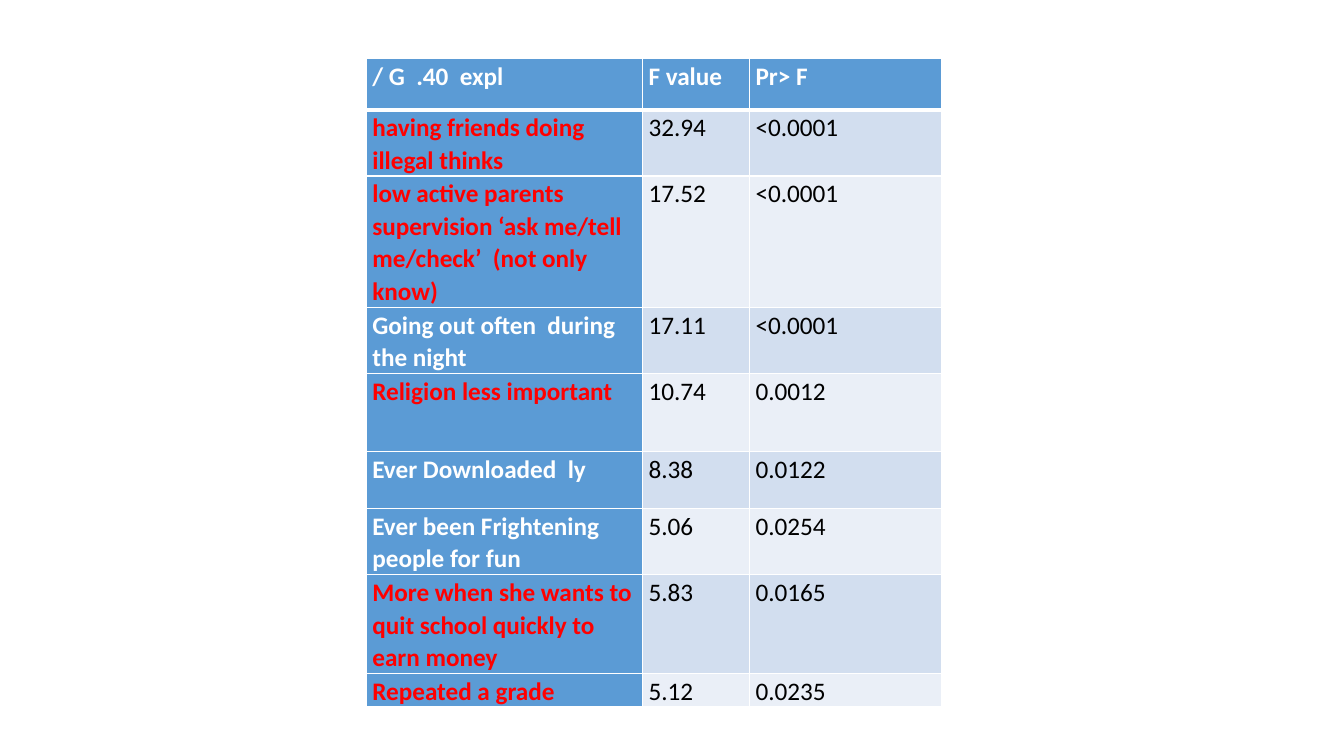
from dataclasses import dataclass

from lxml.etree import SubElement
from pptx import Presentation
from pptx.dml.color import RGBColor as RGB
from pptx.oxml.ns import qn
from pptx.util import Pt


@dataclass(frozen=True)
class Theme:
    font: str = "Calibri"
    size: float = 18
    spacing: float = 1.06
    blue: str = "5B9BD5"
    bands: tuple = ("D2DEEF", "EAEFF7")
    white: str = "FFFFFF"
    black: str = "000000"
    red: str = "FF0000"
    thin: float = 1
    thick: float = 3


THEME = Theme()

HEADER = ("/ G  .40  expl", "F value", "Pr> F")
# Factor, F value, probability, highlighted in red, row height
FACTORS = [
    ("having friends doing illegal thinks", "32.94", "<0.0001", True, 38),
    ("low active parents supervision ‘ask me/tell me/check’  (not only know)",
     "17.52", "<0.0001", True, 38),
    ("Going out often  during the night", "17.11", "<0.0001", False, 38),
    ("Religion less important", "10.74", "0.0012", True, 56),
    ("Ever Downloaded  ly", "8.38", "0.0122", False, 40.5),
    ("Ever been Frightening people for fun", "5.06", "0.0254", False, 38),
    ("More when she wants to quit school quickly to earn money",
     "5.83", "0.0165", True, 38),
    ("Repeated a grade", "5.12", "0.0235", True, 19.5),
]
HEADER_HEIGHT = 36.5
COLUMN_SHARES = (0.48, 0.186, 0.334)


def set_borders(cell, top, bottom):
    """Draw white cell edges; widths are in points."""
    tc_pr = cell._tc.get_or_add_tcPr()
    widths = {"lnL": THEME.thin, "lnR": THEME.thin, "lnT": top, "lnB": bottom}
    for edge, width in widths.items():
        ln = SubElement(tc_pr, qn(f"a:{edge}"), w=str(Pt(width)))
        fill = SubElement(ln, qn("a:solidFill"))
        SubElement(fill, qn("a:srgbClr"), val=THEME.white)


def fill_cell(cell, text, fill, color, bold, top, bottom):
    set_borders(cell, top, bottom)
    cell.fill.solid()
    cell.fill.fore_color.rgb = RGB.from_string(fill)
    margins = {"margin_left": Pt(4.5), "margin_right": Pt(4.5),
               "margin_top": Pt(0.7), "margin_bottom": Pt(0)}
    for name, value in margins.items():
        setattr(cell, name, value)
    p = cell.text_frame.paragraphs[0]
    p.line_spacing = THEME.spacing
    r = p.add_run()
    r.text = text
    formats = {"name": THEME.font, "size": Pt(THEME.size), "bold": bold}
    for name, value in formats.items():
        setattr(r.font, name, value)
    r.font.color.rgb = RGB.from_string(color)


def add_factor_table(s, left, top, width, height):
    table = s.shapes.add_table(len(FACTORS) + 1, len(HEADER), Pt(left), Pt(top),
                               Pt(width), Pt(height)).table
    for column, share in zip(table.columns, COLUMN_SHARES):
        column.width = Pt(width * share)

    # Header row
    table.rows[0].height = Pt(HEADER_HEIGHT)
    for col, text in enumerate(HEADER):
        fill_cell(table.cell(0, col), text, THEME.blue, THEME.white, True,
                  THEME.thin, THEME.thick)

    # Factor rows: blue label column, banded values
    for row, (label, f_value, probability, red, row_height) in enumerate(FACTORS, 1):
        table.rows[row].height = Pt(row_height)
        upper = THEME.thick if row == 1 else THEME.thin
        fill_cell(table.cell(row, 0), label, THEME.blue,
                  THEME.red if red else THEME.white, True, upper, THEME.thin)
        band = THEME.bands[(row - 1) % 2]
        for col, text in enumerate((f_value, probability), 1):
            fill_cell(table.cell(row, col), text, band, THEME.black, False,
                      upper, THEME.thin)


def main():
    prs = Presentation()
    prs.slide_width, prs.slide_height = Pt(960), Pt(540)
    s = prs.slides.add_slide(prs.slide_layouts[6])
    add_factor_table(s, 261.5, 42, 411, 457)
    prs.save("out.pptx")


if __name__ == "__main__":
    main()
